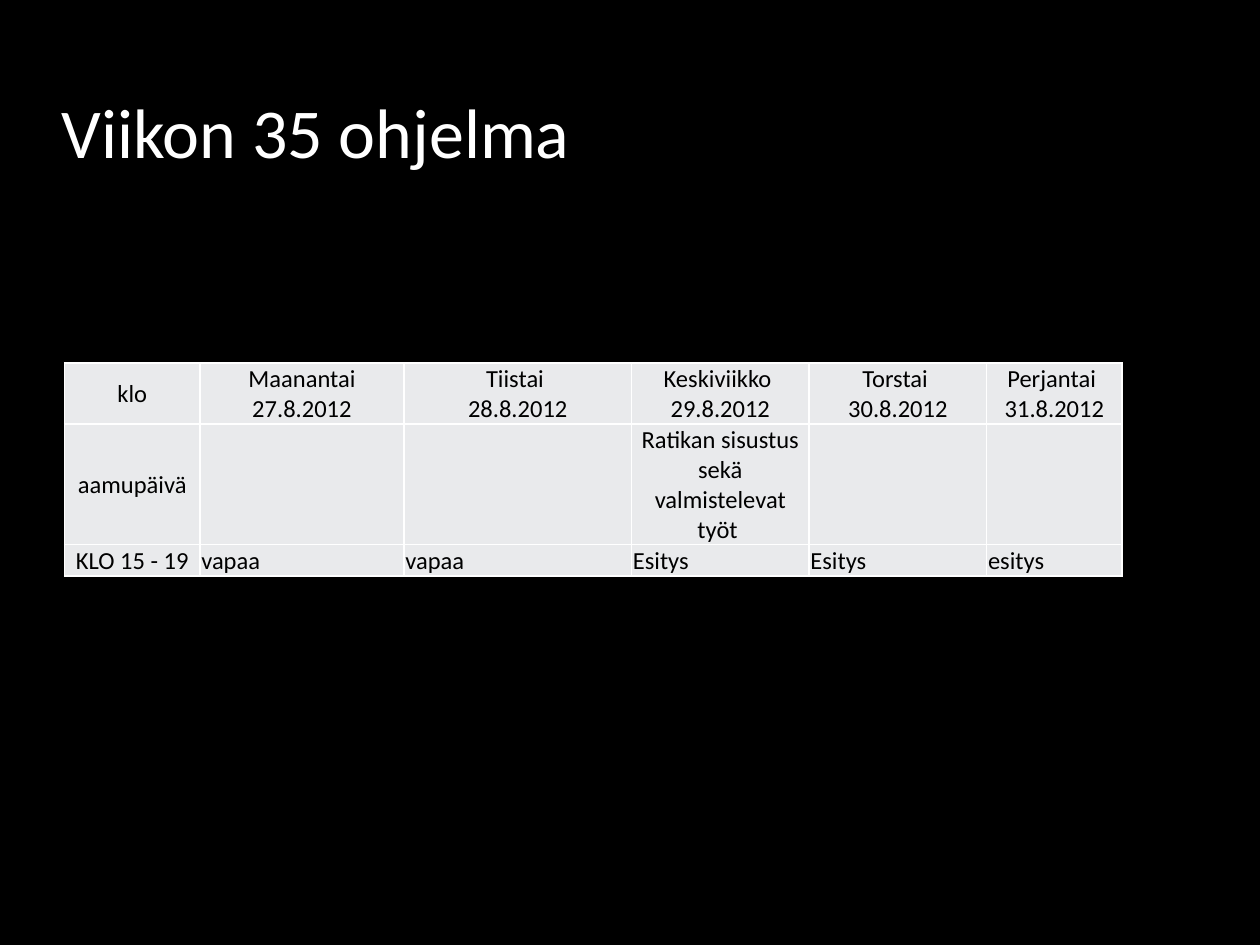
"""Builds the weekly programme slide with its timetable."""
from lxml import etree
from pptx import Presentation
from pptx.dml.color import RGBColor
from pptx.enum import text
from pptx.oxml.ns import qn
from pptx.util import Pt

TITLE = "Viikon 35 ohjelma"
ROWS = [
    ["klo", "Maanantai\v27.8.2012", "Tiistai \v28.8.2012", "Keskiviikko \v29.8.2012",
     "Torstai \v30.8.2012", "Perjantai \v31.8.2012"],
    ["aamupäivä", "", "", "Ratikan sisustus sekä valmistelevat työt ", "", ""],
    ["KLO 15 - 19", "vapaa", "vapaa", "Esitys", "Esitys", "esitys"],
]
COL_WIDTHS = [77.4, 116.6, 130, 101.5, 101.5, 77.4]
ROW_HEIGHTS = [34.3, 68.6, 17.2]
TABLE_LEFT, TABLE_TOP = 36.9, 207.5
TITLE_BOX = {"left": 28.1, "top": 18, "width": 604.8, "height": 84.2}
CELL_FORMAT = {"margin_left": Pt(0.75), "margin_right": Pt(0.75),
               "margin_top": Pt(0.75), "margin_bottom": Pt(0)}
BLACK, WHITE, GREY = "000000", "FFFFFF", "E9EAEC"


def paint(fill, color):
    fill.solid()
    fill.fore_color.rgb = RGBColor.from_string(color)


def set_format(obj, values):
    for name, value in values.items():
        setattr(obj, name, value)


def set_font(p, size, color):
    for r in p.runs:
        set_format(r.font, {"name": "Calibri", "size": Pt(size)})
        r.font.color.rgb = RGBColor.from_string(color)


def add_borders(cell, color, width):
    pr = cell._tc.get_or_add_tcPr()
    for i, side in enumerate(("lnL", "lnR", "lnT", "lnB")):
        ln = etree.Element(qn(f"a:{side}"), w=str(Pt(width)))
        fill = etree.SubElement(ln, qn("a:solidFill"))
        etree.SubElement(fill, qn("a:srgbClr"), val=color)
        pr.insert(i, ln)


def add_title(s):
    sp = s.shapes.title
    set_format(sp, {name: Pt(value) for name, value in TITLE_BOX.items()})
    tf = sp.text_frame
    tf.text = TITLE
    set_format(tf, {"word_wrap": True, "auto_size": text.MSO_AUTO_SIZE.NONE,
                    "vertical_anchor": text.MSO_ANCHOR.BOTTOM})
    p = tf.paragraphs[0]
    set_format(p, {"alignment": text.PP_ALIGN.LEFT, "space_before": Pt(4)})
    set_font(p, 40, WHITE)


def add_timetable(s):
    table = s.shapes.add_table(len(ROWS), len(COL_WIDTHS), Pt(TABLE_LEFT), Pt(TABLE_TOP),
                               Pt(sum(COL_WIDTHS)), Pt(sum(ROW_HEIGHTS))).table
    for column, width in zip(table.columns, COL_WIDTHS):
        column.width = Pt(width)
    for i, (row, height) in enumerate(zip(ROWS, ROW_HEIGHTS)):
        table.rows[i].height = Pt(height)
        for j, words in enumerate(row):
            cell = table.cell(i, j)
            set_format(cell, CELL_FORMAT)
            cell.vertical_anchor = text.MSO_ANCHOR.BOTTOM if j else text.MSO_ANCHOR.MIDDLE
            paint(cell.fill, GREY)
            add_borders(cell, WHITE, 1)
            p = cell.text_frame.paragraphs[0]
            p.text = words
            left = i == len(ROWS) - 1 and j > 0
            p.alignment = text.PP_ALIGN.LEFT if left else text.PP_ALIGN.CENTER
            set_font(p, 14, BLACK)


def main():
    prs = Presentation()
    set_format(prs, {"slide_width": Pt(720), "slide_height": Pt(540)})
    s = prs.slides.add_slide(prs.slide_layouts[5])
    paint(s.background.fill, BLACK)
    add_timetable(s)
    add_title(s)
    prs.save("out.pptx")


if __name__ == "__main__":
    main()
